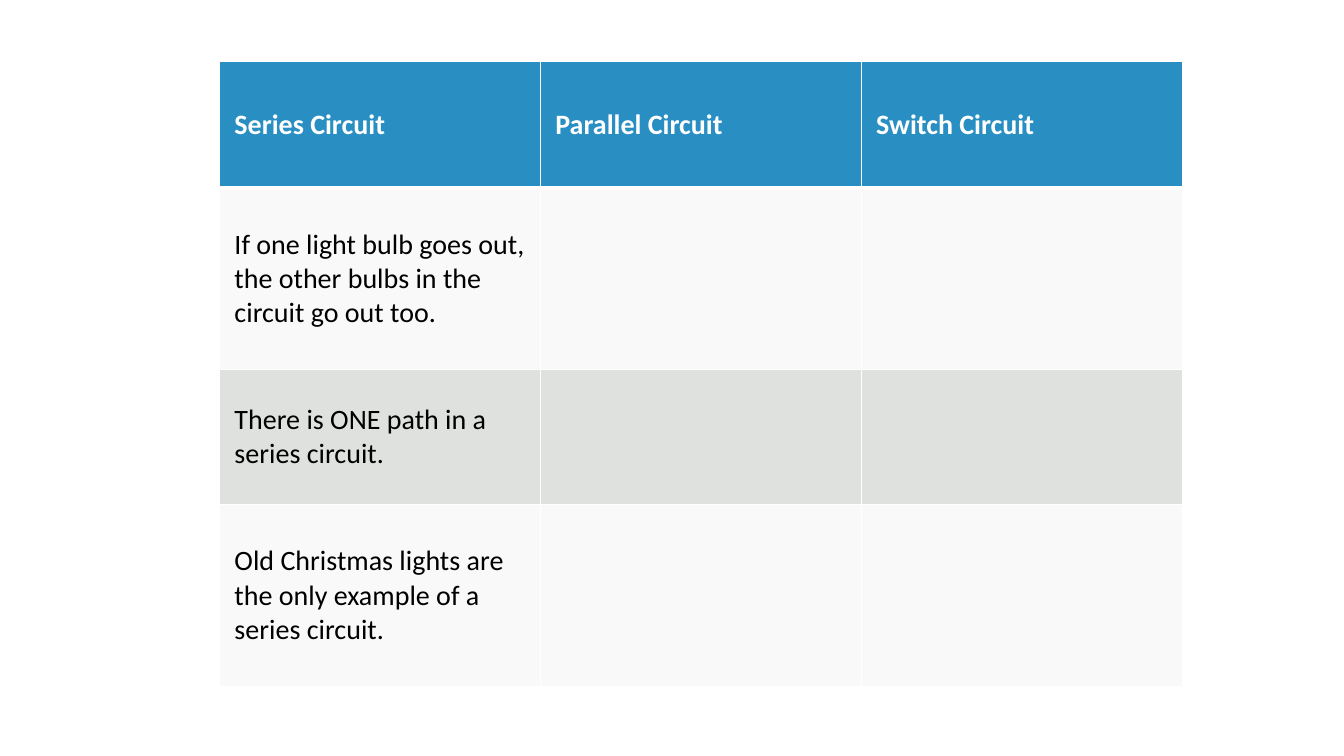
from lxml import etree
from pptx import Presentation
from pptx import util as u
from pptx.dml.color import RGBColor
from pptx.enum import text
from pptx.oxml import ns

WHITE, BLACK, BLUE, GREY = "FFFFFF", "000000", "298FC2", "DFE1DF"


def write(cell, words, color=BLACK, bold=False):
    cell.vertical_anchor = text.MSO_ANCHOR.MIDDLE
    cell.margin_left = cell.margin_right = u.Pt(10.5)
    cell.margin_top = cell.margin_bottom = u.Pt(10.5)
    paragraph = cell.text_frame.paragraphs[0]
    run = paragraph.add_run()
    run.text = words
    run.font.name = "Calibri"
    run.font.size = u.Pt(20)
    run.font.bold = bold
    run.font.color.rgb = RGBColor.from_string(color)


def paint(cell, color, opacity, top, bottom):
    """Fill a cell and give it white borders; top and bottom are widths in points."""
    cell.fill.solid()
    cell.fill.fore_color.rgb = RGBColor.from_string(color)
    properties = cell._tc.get_or_add_tcPr()
    if opacity < 100:
        fill_color = properties.find(".//" + ns.qn("a:srgbClr"))
        etree.SubElement(fill_color, ns.qn("a:alpha"), val=str(opacity * 1000))
    sides = {"lnL": 1, "lnR": 1, "lnT": top, "lnB": bottom}
    for position, (side, width) in enumerate(sides.items()):
        line = etree.Element(ns.qn("a:" + side), w=str(u.Pt(width)))
        solid = etree.SubElement(line, ns.qn("a:solidFill"))
        etree.SubElement(solid, ns.qn("a:srgbClr"), val=WHITE)
        properties.insert(position, line)


presentation = Presentation()
presentation.slide_width = u.Pt(960)
presentation.slide_height = u.Pt(540)
slide = presentation.slides.add_slide(presentation.slide_layouts[6])

headings = ["Series Circuit", "Parallel Circuit", "Switch Circuit"]
series_facts = [
    "If one light bulb goes out, the other bulbs in the circuit go out too.",
    "There is ONE path in a series circuit.",
    "Old Christmas lights are the only example of a series circuit.",
]
row_heights = [90.5, 129.6, 96.5, 129.6]
column_width = 229.2

frame = slide.shapes.add_table(
    len(row_heights), len(headings), u.Pt(157), u.Pt(44),
    u.Pt(column_width * len(headings)), u.Pt(sum(row_heights)))
table = frame.table
for column in table.columns:
    column.width = u.Pt(column_width)
for row, height in zip(table.rows, row_heights):
    row.height = u.Pt(height)

for column_number, heading in enumerate(headings):
    cell = table.cell(0, column_number)
    write(cell, heading, color=WHITE, bold=True)
    paint(cell, BLUE, opacity=100, top=1, bottom=3)

for row_number, fact in enumerate(series_facts, start=1):
    write(table.cell(row_number, 0), fact)
    for cell in table.rows[row_number].cells:
        paint(cell, GREY, opacity=20 if row_number % 2 else 100,
              top=3 if row_number == 1 else 1, bottom=1)

presentation.save("out.pptx")
